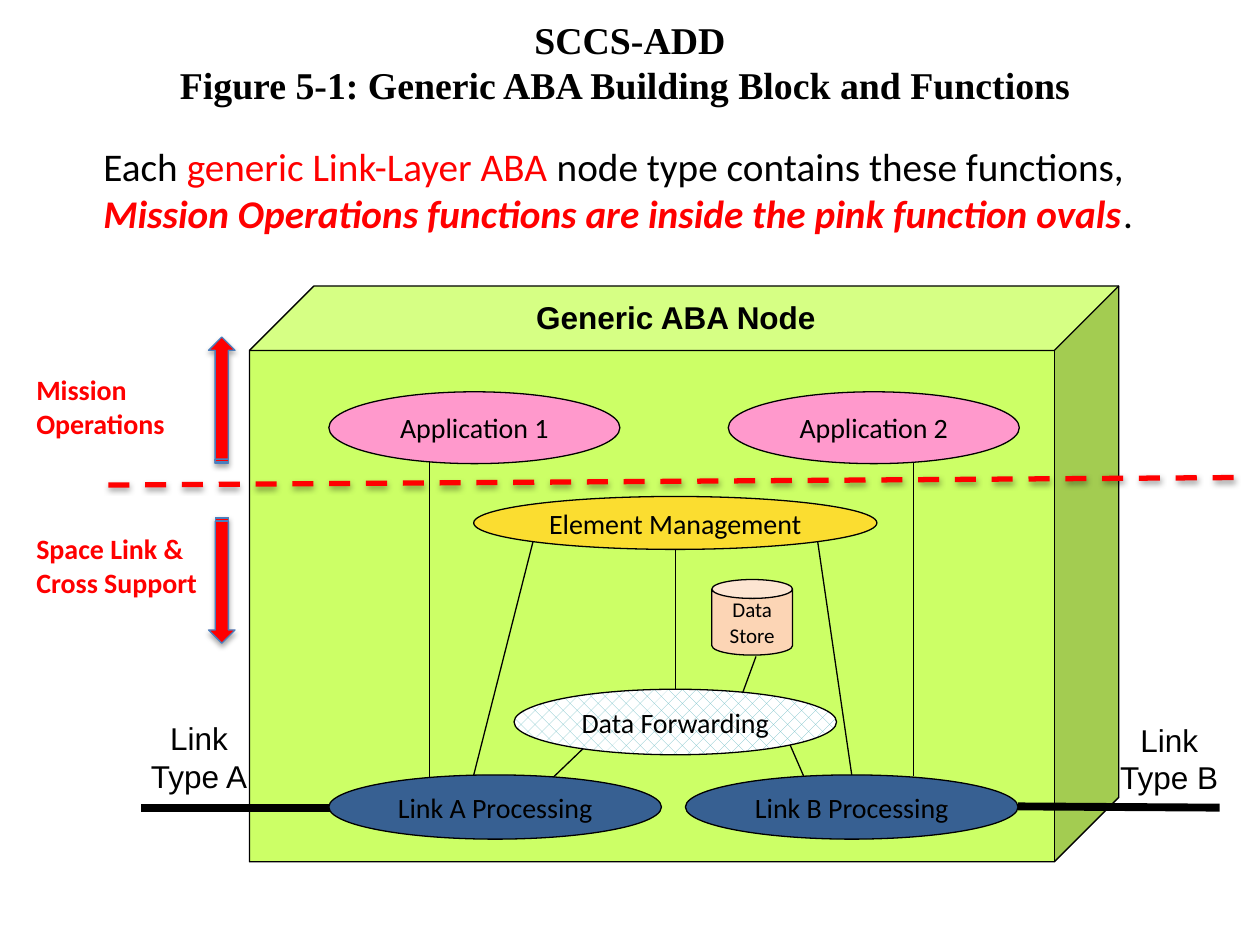
"""Build the slide showing the generic ABA building block and its functions."""
from lxml.etree import SubElement
from pptx import Presentation
from pptx.dml.color import RGBColor
from pptx.enum.dml import MSO_LINE, MSO_PATTERN
from pptx.enum.shapes import MSO_CONNECTOR, MSO_SHAPE
from pptx.enum.text import MSO_ANCHOR, MSO_AUTO_SIZE, PP_ALIGN
from pptx.oxml.ns import qn
from pptx.util import Inches, Pt

color = RGBColor.from_string


def write(frame, text, size, font="Calibri", ink="000000", bold=False, align=PP_ALIGN.CENTER):
    frame.text = text
    for para in frame.paragraphs:
        para.alignment = align
        for span in para.runs:
            span.font.size = Pt(size)
            span.font.name = font
            span.font.bold = bold
            span.font.color.rgb = color(ink)


def set_effect(item, opacity=0, distance=0):
    effects = SubElement(item._element.spPr, qn("a:effectLst"))
    if opacity:
        shadow = SubElement(effects, qn("a:outerShdw"), blurRad=str(Pt(3.1)),
                            dist=str(Pt(distance)), dir="5400000", rotWithShape="0")
        ink = SubElement(shadow, qn("a:srgbClr"), val="000000")
        SubElement(ink, qn("a:alpha"), val=str(opacity * 1000))


deck = Presentation()
deck.slide_width, deck.slide_height = Inches(10), Inches(7.5)
page = deck.slides.add_slide(deck.slide_layouts[1])

title, body = page.shapes.title, page.placeholders[1]
for holder, place in [(title, (0.5, 0.1, 9, 0.78)), (body, (0.72, 1.08, 8.5, 0.71))]:
    holder.left, holder.top, holder.width, holder.height = map(Inches, place)
    holder.text_frame.auto_size = MSO_AUTO_SIZE.NONE

write(title.text_frame, "SCCS-ADD\vFigure 5‑1: Generic ABA Building Block and Functions ",
      21.6, "Times New Roman", bold=True)
title.text_frame.vertical_anchor = MSO_ANCHOR.MIDDLE

intro = body.text_frame.paragraphs[0]
properties = intro._p.get_or_add_pPr()
properties.set("marL", "0")
properties.set("indent", "0")
SubElement(properties, qn("a:buNone"))
for text, ink, strong in [
    ("Each ", "000000", False),
    ("generic Link-Layer ABA ", "FF0000", False),
    ("node type contains these functions, ", "000000", False),
    ("Mission Operations functions are inside the pink function ovals", "FF0000", True),
    (".", "000000", False),
]:
    span = intro.add_run()
    span.text = text
    span.font.size = Pt(22.4)
    span.font.name = "Calibri"
    span.font.bold = span.font.italic = strong
    span.font.color.rgb = color(ink)

node = page.shapes.add_shape(MSO_SHAPE.CUBE, Inches(1.98), Inches(2.27), Inches(6.9), Inches(4.57))
node.adjustments[0] = 0.112
node.fill.solid()
node.fill.fore_color.rgb = color("CCFF66")
node.line.color.rgb = color("000000")
node.line.width = Pt(0.75)
node.shadow.inherit = False

for x1, y1, x2, y2, width in [
    (4.64, 5.93, 4.39, 6.17, 0.75),
    (6.27, 5.91, 6.4, 6.21, 0.75),
    (3.41, 3.66, 3.41, 6.26, 0.75),
    (4.23, 4.3, 3.76, 6.15, 0.75),
    (6.49, 4.3, 6.76, 6.15, 0.75),
    (7.25, 3.66, 7.25, 6.16, 0.75),
    (5.36, 4.36, 5.36, 5.47, 0.75),
    (6, 5.21, 5.89, 5.51, 0.75),
    (2.62, 6.41, 1.12, 6.41, 4.5),
    (9.68, 6.41, 8.08, 6.4, 4.5),
]:
    link = page.shapes.add_connector(MSO_CONNECTOR.STRAIGHT, Inches(x1), Inches(y1),
                                     Inches(x2), Inches(y2))
    link.line.color.rgb = color("000000")
    link.line.width = Pt(width)
    set_effect(link)

for kind, text, left, top, width, height, fill, size in [
    (MSO_SHAPE.OVAL, "Application 1", 2.61, 3.11, 2.31, 0.57, "FF99CC", 16),
    (MSO_SHAPE.OVAL, "Application 2", 5.78, 3.11, 2.31, 0.57, "FF99CC", 16),
    (MSO_SHAPE.OVAL, "Element Management", 3.76, 3.94, 3.2, 0.42, "FBDD30", 16),
    (MSO_SHAPE.CAN, "Data\nStore", 5.65, 4.6, 0.64, 0.6, "FCD5B5", 12),
    (MSO_SHAPE.OVAL, "Data Forwarding", 4.08, 5.47, 2.56, 0.52, None, 16),
    (MSO_SHAPE.OVAL, "Link B Processing", 5.44, 6.15, 2.64, 0.51, "376092", 16),
    (MSO_SHAPE.OVAL, "Link A Processing", 2.61, 6.15, 2.64, 0.51, "376092", 16),
]:
    function = page.shapes.add_shape(kind, Inches(left), Inches(top), Inches(width), Inches(height))
    if fill:
        function.fill.solid()
        function.fill.fore_color.rgb = color(fill)
    else:
        function.fill.patterned()
        function.fill.pattern = MSO_PATTERN.PERCENT_25
        function.fill.fore_color.rgb = color("72BFC5")
        function.fill.back_color.rgb = color("FFFFFF")
    function.line.color.rgb = color("000000")
    function.line.width = Pt(0.75)
    function.shadow.inherit = False
    frame = function.text_frame
    frame.margin_left = frame.margin_right = frame.margin_top = frame.margin_bottom = 0
    frame.vertical_anchor = MSO_ANCHOR.MIDDLE
    write(frame, text, size)

boundary = page.shapes.add_connector(MSO_CONNECTOR.STRAIGHT, Inches(0.86), Inches(3.85),
                                     Inches(9.83), Inches(3.79))
boundary.line.color.rgb = color("FF0000")
boundary.line.width = Pt(3)
boundary.line.dash_style = MSO_LINE.DASH
set_effect(boundary, 38, 1.6)

for text, left, top, width, height, size, font, ink, bold, align, wrap in [
    ("Generic ABA Node", 3.96, 2.32, 2.81, 0.44, 18, "Arial", "000000", True, PP_ALIGN.CENTER, True),
    ("Link Type A", 1.03, 5.66, 1.1, 0.74, 18, "Arial", "000000", False, PP_ALIGN.CENTER, True),
    ("Link Type B", 8.73, 5.67, 1.1, 0.74, 18, "Arial", "000000", False, PP_ALIGN.CENTER, True),
    ("Mission\nOperations", 0.19, 2.91, 1.24, 0.64, 16, "Calibri", "FF0000", True, PP_ALIGN.LEFT, False),
    ("Space Link &\nCross Support", 0.19, 4.17, 1.5, 0.64, 16, "Calibri", "FF0000", True, PP_ALIGN.LEFT, False),
]:
    label = page.shapes.add_textbox(Inches(left), Inches(top), Inches(width), Inches(height))
    label.text_frame.word_wrap = wrap
    write(label.text_frame, text, size, font, ink, bold, align)

for top, rotation in [(3.07, 270), (4.5, 90)]:
    arrow = page.shapes.add_shape(MSO_SHAPE.STRIPED_RIGHT_ARROW, Inches(1.26), Inches(top),
                                  Inches(1), Inches(0.21))
    arrow.rotation = rotation
    arrow.fill.solid()
    arrow.fill.fore_color.rgb = color("FF0000")
    arrow.line.color.rgb = color("4B7EBC")
    arrow.line.width = Pt(0.75)
    set_effect(arrow, 35, 1.8)

deck.save("out.pptx")
